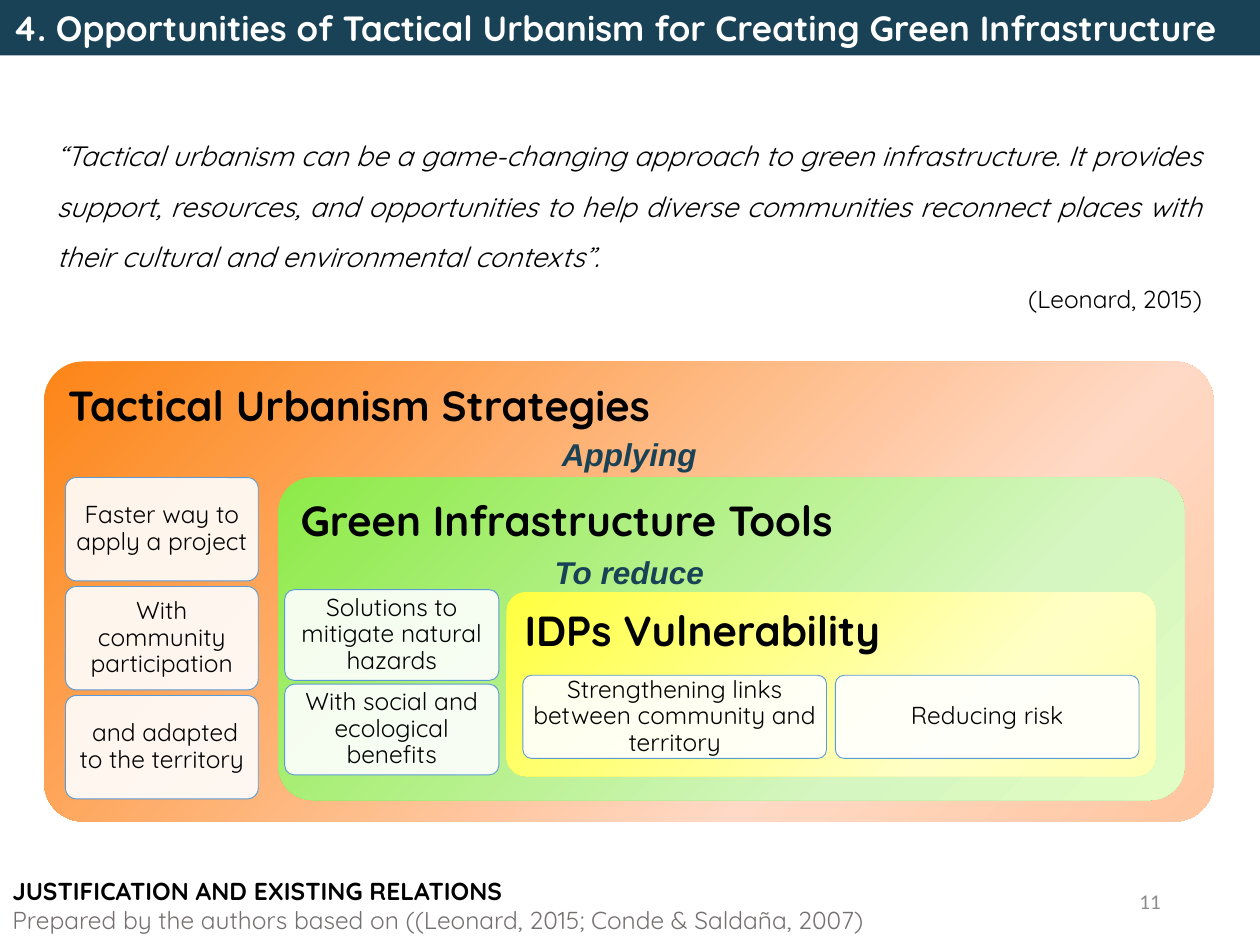
from copy import deepcopy

from lxml import etree
from pptx import Presentation
from pptx.dml.color import RGBColor
from pptx.enum.shapes import MSO_SHAPE
from pptx.enum.text import MSO_ANCHOR, MSO_AUTO_SIZE, PP_ALIGN
from pptx.oxml.ns import qn
from pptx.util import Inches, Pt

FONT = "Quicksand"
NAVY = "194256"
CARD_LINE = "5B9BD5"


def rgb(value):
    return RGBColor.from_string(value)


def inches(box):
    return [Inches(v) for v in box]


def add_text(tf, text, size=14, color="000000", font=FONT, bold=False,
             italic=False, align=PP_ALIGN.LEFT, spacing=1.0, after=0):
    """Fill the empty first paragraph, or append another one."""
    p = tf.paragraphs[0] if not tf.text else tf.add_paragraph()
    p.alignment, p.line_spacing, p.space_after = align, spacing, Pt(after)
    r = p.add_run()
    r.text = text
    f = r.font
    f.name, f.size, f.bold, f.italic = font, Pt(size), bold, italic
    f.color.rgb = rgb(color)


def text_box(s, box, anchor=MSO_ANCHOR.TOP):
    tf = s.shapes.add_textbox(*inches(box)).text_frame
    tf.word_wrap = True
    tf.vertical_anchor = anchor
    return tf


def rounded(s, box, radius, inset, anchor):
    sp = s.shapes.add_shape(MSO_SHAPE.ROUNDED_RECTANGLE, *inches(box))
    sp.adjustments[0] = radius
    sp.shadow.inherit = False
    tf = sp.text_frame
    tf.word_wrap = True
    tf.vertical_anchor = anchor
    tf.margin_left = tf.margin_right = Inches(inset)
    tf.margin_top = tf.margin_bottom = Inches(inset)
    return sp


def gradient(sp, colors):
    """Diagonal three-stop gradient from top left to bottom right."""
    sp.fill.gradient()
    sp.fill.gradient_angle = 315
    stops = sp._element.spPr.find(qn("a:gradFill")).find(qn("a:gsLst"))
    stops.append(deepcopy(stops[-1]))
    for stop, pos, color in zip(sp.fill.gradient_stops, (0, 0.7, 1), colors):
        stop.position = pos
        stop.color.rgb = rgb(color)


def panel(s, box, heading, colors, radius=0.105):
    sp = rounded(s, box, radius, 0.1, MSO_ANCHOR.TOP)
    gradient(sp, colors)
    sp.line.fill.background()
    add_text(sp.text_frame, heading, size=24, bold=True, spacing=0.9)


def card(s, box, text):
    sp = rounded(s, box, 0.105, 0.06, MSO_ANCHOR.MIDDLE)
    sp.fill.solid()
    sp.fill.fore_color.rgb = rgb("FFFFFF")
    color = sp._element.spPr.find(qn("a:solidFill"))[0]
    etree.SubElement(color, qn("a:alpha")).set("val", "90000")
    sp.line.color.rgb = rgb(CARD_LINE)
    sp.line.width = Pt(0.5)
    add_text(sp.text_frame, text, align=PP_ALIGN.CENTER, spacing=0.9)


def cards(s, box, texts, gap, across=False):
    """Divide the box into equal cards, down or across."""
    x, y, w, h = box
    n = len(texts)
    size = ((w if across else h) - gap * (n - 1)) / n
    for i, text in enumerate(texts):
        move = i * (size + gap)
        place = (x + move, y, size, h) if across else (x, y + move, w, size)
        card(s, place, text)


def title_bar(s, box, text):
    title = s.shapes.title
    title.left, title.top, title.width, title.height = inches(box)
    title.fill.solid()
    title.fill.fore_color.rgb = rgb(NAVY)
    tf = title.text_frame
    tf.word_wrap = True
    tf.auto_size = MSO_AUTO_SIZE.NONE
    tf.vertical_anchor = MSO_ANCHOR.MIDDLE
    add_text(tf, text, size=20, color="FFFFFF", bold=True)


def quote(s, box):
    tf = text_box(s, box)
    add_text(tf, "“Tactical urbanism can be a game-changing approach to green "
             "infrastructure. It provides support, resources, and opportunities "
             "to help diverse communities reconnect places with their cultural "
             "and environmental contexts”.", size=16, italic=True,
             align=PP_ALIGN.JUSTIFY, spacing=1.5, after=6)
    add_text(tf, "(Leonard, 2015)", align=PP_ALIGN.RIGHT, after=6)


def nested_diagram(s, box):
    x, y, w, h = box
    # Outer panel: strategies
    panel(s, box, "Tactical Urbanism Strategies",
          ("FD8517", "FFD9C5", "FFC69F"), radius=0.085)
    cards(s, (x + 0.17, y + 0.92, 1.53, 2.55),
          ["Faster way to apply a project", "With community participation",
           " and adapted to the territory"], gap=0.045)
    # Middle panel: tools
    panel(s, (x + 1.86, y + 0.92, w - 2.09, 2.56), "Green Infrastructure Tools",
          ("8DEA48", "D5F6C0", "E1FDC3"))
    cards(s, (x + 1.91, y + 1.81, 1.7, 1.47),
          ["Solutions to mitigate natural hazards",
           "With social and ecological benefits"], gap=0.03)
    # Inner panel: vulnerability
    panel(s, (x + 3.67, y + 1.83, w - 4.13, 1.46), "IDPs Vulnerability",
          ("FFFF3F", "FFFFC5", "FFFFB3"))
    cards(s, (x + 3.8, y + 2.49, 4.89, 0.66),
          ["Strengthening links between community and territory",
           "Reducing risk"], gap=0.07, across=True)
    # Linking words
    for dy, word in ((0.53, "Applying"), (1.47, "To reduce")):
        add_text(text_box(s, (x + 3.86, y + dy, 1.57, 0.4)), word, size=18,
                 color=NAVY, font="Arial", bold=True, italic=True,
                 align=PP_ALIGN.CENTER)


def footer(s, box):
    x, y, w, h = box
    tf = text_box(s, box)
    add_text(tf, "JUSTIFICATION AND EXISTING RELATIONS", bold=True)
    add_text(tf, "Prepared by the authors based on "
             "((Leonard, 2015; Conde & Saldaña, 2007)", color="767171")
    # Slide number
    number = text_box(s, (x + 7.06, y + 0.05, 2.25, 0.4), MSO_ANCHOR.MIDDLE)
    add_text(number, "11", size=12, color="8C8C8C", font="Calibri",
             align=PP_ALIGN.RIGHT)


def main():
    prs = Presentation()
    prs.slide_width, prs.slide_height = Inches(10), Inches(7.5)
    s = prs.slides.add_slide(prs.slide_layouts[5])
    title_bar(s, (0, 0, 10, 0.44), "4. Opportunities of Tactical Urbanism "
              "for Creating Green Infrastructure")
    quote(s, (0.35, 0.92, 9.29, 1.63))
    nested_diagram(s, (0.35, 2.87, 9.28, 3.65))
    footer(s, (0, 6.9, 10, 0.57))
    prs.save("out.pptx")


if __name__ == "__main__":
    main()
